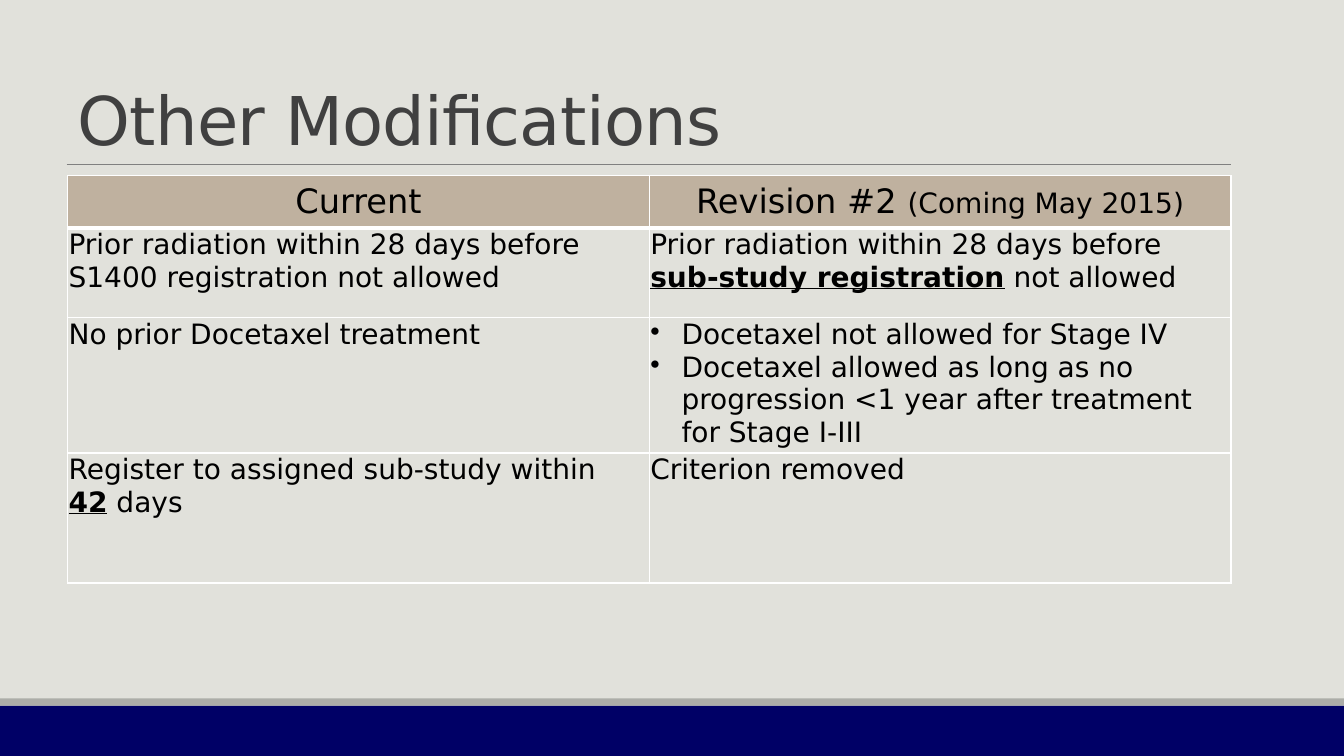
from lxml import etree
from pptx import Presentation
from pptx.dml.color import RGBColor
from pptx.enum.shapes import MSO_CONNECTOR, MSO_SHAPE
from pptx.enum.text import MSO_ANCHOR, PP_ALIGN
from pptx.oxml.ns import qn
from pptx.util import Inches, Pt

RECTANGLE = MSO_SHAPE.RECTANGLE
STRAIGHT = MSO_CONNECTOR.STRAIGHT
BOTTOM, MIDDLE, TOP = MSO_ANCHOR.BOTTOM, MSO_ANCHOR.MIDDLE, MSO_ANCHOR.TOP
CENTER, LEFT = PP_ALIGN.CENTER, PP_ALIGN.LEFT
FONT = "DejaVu Sans"
BLACK, WHITE, TAN = "000000", "FFFFFF", "BFB19F"
COLUMN_WIDTH = 5.77
ROW_HEIGHTS = [0.52, 0.89, 1.3, 1.29]
HEADERS = [
    [("Current", 24)],
    [("Revision #2 ", 24), ("(Coming May 2015)", 20)],
]
BODY = [
    [
        [["Prior radiation within 28 days before S1400 registration not allowed"]],
        [["Prior radiation within 28 days before ", "*sub-study registration", " not allowed"]],
    ],
    [
        [["No prior Docetaxel treatment"]],
        [
            ["Docetaxel not allowed for Stage IV"],
            ["Docetaxel allowed as long as no progression <1 year after treatment for Stage I-III"],
        ],
    ],
    [
        [["Register to assigned sub-study within ", "\n", "*42", " days"]],
        [["Criterion removed"]],
    ],
]


def color(value):
    return RGBColor.from_string(value)


def style(span, size, fill, strong=False):
    span.font.name = FONT
    span.font.size = Pt(size)
    span.font.bold = strong
    span.font.underline = strong
    span.font.color.rgb = color(fill)


def add_band(page, top, height, fill):
    band = page.shapes.add_shape(RECTANGLE, 0, Inches(top), Inches(13.33), Inches(height))
    band.shadow.inherit = False
    band.fill.solid()
    band.fill.fore_color.rgb = color(fill)
    band.line.fill.background()


def add_rule(page, left, right, top):
    rule = page.shapes.add_connector(
        STRAIGHT, Inches(left), Inches(top), Inches(right), Inches(top)
    )
    rule.line.color.rgb = color("808080")
    rule.line.width = Pt(0.5)
    etree.SubElement(rule._element.spPr, qn("a:effectLst"))


def add_title(page, text):
    box = page.shapes.add_textbox(Inches(0.67), Inches(0.04), Inches(11.53), Inches(1.59))
    frame = box.text_frame
    frame.word_wrap = True
    frame.vertical_anchor = BOTTOM
    frame.text = text
    para = frame.paragraphs[0]
    para.line_spacing = 0.85
    span = para.runs[0]
    style(span, 48, "404040")
    span.font._element.set("spc", "-50")


def set_borders(cell, bottom_width):
    properties = cell._tc.get_or_add_tcPr()
    widths = {"a:lnL": 1, "a:lnR": 1, "a:lnT": 1, "a:lnB": bottom_width}
    for position, (side, width) in enumerate(widths.items()):
        line = etree.Element(qn(side), w=str(Pt(width)))
        fill = etree.SubElement(line, qn("a:solidFill"))
        etree.SubElement(fill, qn("a:srgbClr"), val=WHITE)
        properties.insert(position, line)


def format_cell(cell, anchor, bottom_width):
    cell.margin_left = cell.margin_right = cell.margin_top = Inches(0.01)
    cell.margin_bottom = 0
    cell.vertical_anchor = anchor
    set_borders(cell, bottom_width)


def add_bullet(para):
    properties = para._p.get_or_add_pPr()
    properties.set("marL", str(Inches(0.31)))
    properties.set("indent", str(-Inches(0.31)))
    etree.SubElement(properties, qn("a:buChar"), char="•")


def fill_header(cell, parts):
    cell.fill.solid()
    cell.fill.fore_color.rgb = color(TAN)
    format_cell(cell, MIDDLE, 3)
    para = cell.text_frame.paragraphs[0]
    para.alignment = CENTER
    for text, size in parts:
        span = para.add_run()
        span.text = text
        style(span, size, BLACK)


def fill_body(cell, paragraphs):
    cell.fill.background()
    format_cell(cell, TOP, 1)
    frame = cell.text_frame
    for index, parts in enumerate(paragraphs):
        para = frame.add_paragraph() if index else frame.paragraphs[0]
        para.alignment = LEFT
        if len(paragraphs) > 1:
            add_bullet(para)
        for part in parts:
            if part == "\n":
                para.add_line_break()
                continue
            span = para.add_run()
            span.text = part.lstrip("*")
            style(span, 20, BLACK, part.startswith("*"))


def add_comparison(page):
    table = page.shapes.add_table(
        len(ROW_HEIGHTS), len(HEADERS), Inches(0.67), Inches(1.74),
        Inches(COLUMN_WIDTH * len(HEADERS)), Inches(sum(ROW_HEIGHTS)),
    ).table
    table.first_row = False
    table.horz_banding = False
    for column in table.columns:
        column.width = Inches(COLUMN_WIDTH)
    for row, height in zip(table.rows, ROW_HEIGHTS):
        row.height = Inches(height)
    for column, parts in enumerate(HEADERS):
        fill_header(table.cell(0, column), parts)
    for row, cells in enumerate(BODY, start=1):
        for column, paragraphs in enumerate(cells):
            fill_body(table.cell(row, column), paragraphs)


def main():
    deck = Presentation()
    deck.slide_width = Inches(13.33)
    deck.slide_height = Inches(7.5)
    page = deck.slides.add_slide(deck.slide_layouts[6])
    page.background.fill.solid()
    page.background.fill.fore_color.rgb = color("E1E1DB")
    add_band(page, 7, 0.5, "000066")
    add_band(page, 6.93, 0.07, "ACADA8")
    add_rule(page, 0.66, 12.21, 1.63)
    add_title(page, "Other Modifications")
    add_comparison(page)
    deck.save("out.pptx")


if __name__ == "__main__":
    main()
